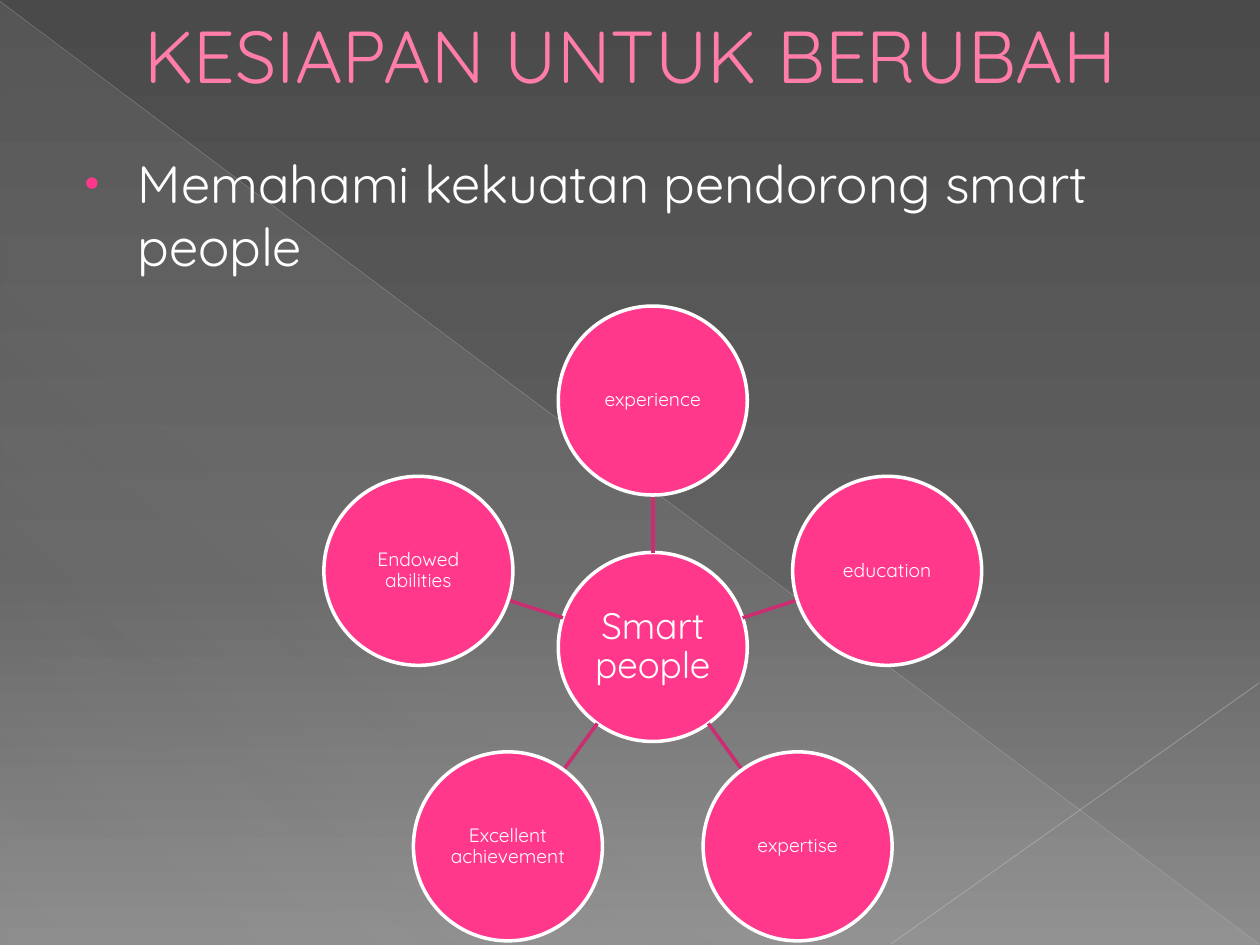
from math import cos, pi, sin

from lxml.etree import SubElement as Sub
from pptx import Presentation
from pptx.dml.color import RGBColor as RGB
from pptx.enum.shapes import MSO_CONNECTOR as Conn, MSO_SHAPE as Shape
from pptx.enum.text import MSO_ANCHOR as Anchor, MSO_AUTO_SIZE as Auto, PP_ALIGN as Align
from pptx.oxml.ns import qn
from pptx.util import Cm, Pt

FONT = "Quicksand"
PINK = RGB(0xFF, 0x38, 0x8C)
ROSE = RGB(0xFF, 0x7D, 0xA7)
SPOKE = RGB(0xCC, 0x2D, 0x70)
WHITE = RGB(0xFF, 0xFF, 0xFF)
PALE = RGB(0xD2, 0xD2, 0xD2)
RULES = RGB(0xBF, 0xBF, 0xBF), RGB(0xC6, 0xC6, 0xC6)
GREYS = RGB(0x4A, 0x4A, 0x4A), RGB(0x62, 0x62, 0x62), RGB(0x8C, 0x8C, 0x8C)
PARTS = ["experience", "education", "expertise",
         "Excellent achievement", "Endowed abilities"]


def write(shape, text, size, color=WHITE, align=Align.LEFT,
          anchor=Anchor.MIDDLE, inset=None, space=1.0):
    """Put one formatted paragraph into a shape and return it."""
    frame = shape.text_frame
    frame.word_wrap = True
    frame.auto_size = Auto.NONE
    frame.vertical_anchor = anchor
    if inset is not None:
        frame.margin_left = frame.margin_right = inset
        frame.margin_top = frame.margin_bottom = inset
    para = frame.paragraphs[0]
    para.alignment = align
    para.line_spacing = space
    run = para.add_run()
    run.text = text
    run.font.name = FONT
    run.font.size = Pt(size)
    run.font.color.rgb = color
    return para


def fade(color, alpha):
    """Add an alpha percentage to a colour element."""
    Sub(color, qn("a:alpha")).set("val", str(alpha * 1000))


def blend(fill, root, angle, stops):
    """Give a fill a gradient of (place, colour, alpha) stops."""
    fill.gradient()
    fill.gradient_angle = 360 - angle
    group = next(root.iter(qn("a:gsLst")))
    for old in list(group):
        group.remove(old)
    for place, color, alpha in stops:
        stop = Sub(group, qn("a:gs"))
        stop.set("pos", str(place * 1000))
        tint = Sub(stop, qn("a:srgbClr"))
        tint.set("val", str(color))
        if alpha < 100:
            fade(tint, alpha)


def rule(slide, start, end, color, width, alpha=100):
    """Draw a plain straight line between two points."""
    line = slide.shapes.add_connector(Conn.STRAIGHT, *start, *end)
    line.line.color.rgb = color
    line.line.width = Pt(width)
    props = line._element.spPr
    if alpha < 100:
        fade(next(props.iter(qn("a:srgbClr"))), alpha)
    Sub(props, qn("a:effectLst"))


def decor(slide, left, top, width, height):
    """Draw the backdrop, its pale triangle and two thin lines."""
    blend(slide.background.fill, slide.element, 90,
          zip((0, 60, 100), GREYS, (100, 100, 100)))
    tri = slide.shapes.add_shape(Shape.RIGHT_TRIANGLE, left, top, width, height)
    tri.shadow.inherit = False
    tri.line.fill.background()
    blend(tri.fill, tri._element, 133,
          [(0, PALE, 10), (70, PALE, 8), (100, PALE, 1)])
    right, base = left + width, top + height
    rule(slide, (left, top), (right, base), RULES[0], 0.39, 35)
    rule(slide, (right, top + Cm(13.74)), (left + Cm(17.96), base),
         RULES[1], 0.47, 45)


def place(slide, holder, box):
    """Move a placeholder to a box, in front of the backdrop."""
    holder.left, holder.top, holder.width, holder.height = box
    slide.shapes._spTree.append(holder._element)


def head(slide, *box):
    """Fill the title."""
    title = slide.shapes.title
    place(slide, title, box)
    para = write(title, "KESIAPAN UNTUK BERUBAH", 42, ROSE)
    para._p.get_or_add_pPr().set("marL", str(Cm(1.35)))


def body(slide, *box):
    """Fill the bulleted list."""
    holder = slide.placeholders[1]
    place(slide, holder, box)
    para = write(holder, "Memahami kekuatan pendorong smart people", 30,
                 anchor=Anchor.TOP)
    para.space_before = Pt(0)
    props = para._p.get_or_add_pPr()
    props.set("marL", str(Cm(1.25)))
    props.set("indent", str(-Cm(1.07)))
    Sub(Sub(props, qn("a:buClr")), qn("a:srgbClr")).set("val", str(PINK))
    Sub(props, qn("a:buSzPct")).set("val", "80000")
    Sub(props, qn("a:buFont")).set("typeface", "Arial")
    Sub(props, qn("a:buChar")).set("char", "•")


def disc(slide, x, y, size, text, points):
    """Draw a labelled circle around a centre."""
    oval = slide.shapes.add_shape(
        Shape.OVAL, int(x - size / 2), int(y - size / 2), size, size)
    oval.shadow.inherit = False
    oval.fill.solid()
    oval.fill.fore_color.rgb = PINK
    oval.line.color.rgb = WHITE
    oval.line.width = Pt(2)
    write(oval, text, points, align=Align.CENTER, inset=Cm(0.03), space=0.9)


def wheel(slide, left, top, width, size):
    """Draw the hub with its ring of linked circles."""
    step = 2 * pi / len(PARTS)
    ring = (width - size) / 2 / sin(step)
    x, y = left + width / 2, top + size / 2 + ring

    def spot(turn, reach):
        """Find the point at a turn and distance from the hub."""
        return int(x + reach * sin(turn)), int(y - reach * cos(turn))

    disc(slide, x, y, size, "Smart people", 21)
    for i, text in enumerate(PARTS):
        turn = i * step
        rule(slide, spot(turn, size / 2), spot(turn, ring - size / 2), SPOKE, 2)
        disc(slide, *spot(turn, ring), size, text, 11)


def main():
    """Build the deck and save it."""
    deck = Presentation()
    deck.slide_width, deck.slide_height = Cm(25.4), Cm(19.05)
    slide = deck.slides.add_slide(deck.slide_layouts[1])
    decor(slide, Cm(0), Cm(0.03), Cm(25.38), Cm(19))
    head(slide, Cm(1.3), Cm(-0.86), Cm(22.86), Cm(3.89))
    body(slide, Cm(1.27), Cm(2.92), Cm(22.86), Cm(15.01))
    wheel(slide, Cm(6.53), Cm(6.17), Cm(13.26), Cm(3.81))
    deck.save("out.pptx")


if __name__ == "__main__":
    main()
